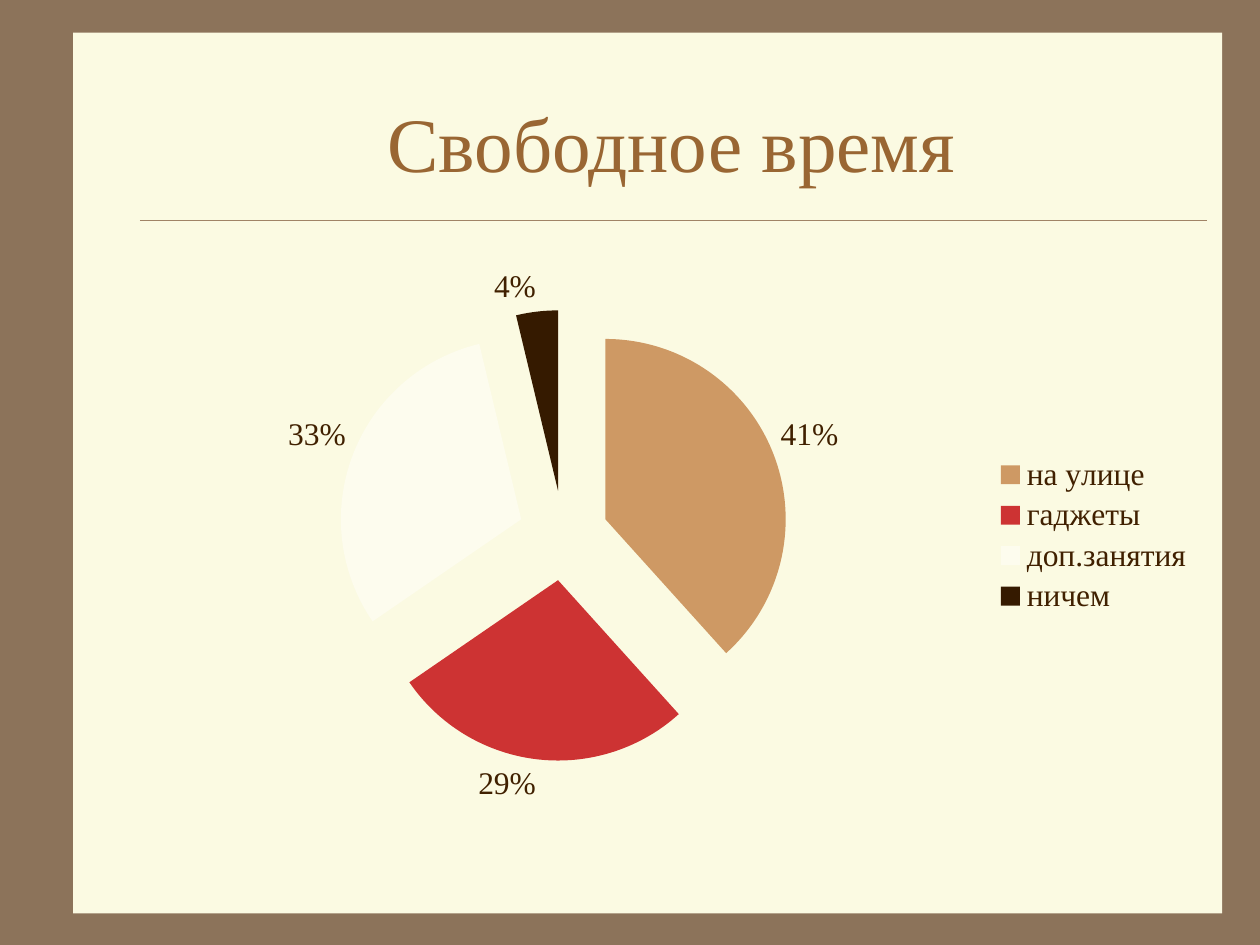
from dataclasses import dataclass

from lxml import etree
from pptx import Presentation
from pptx.chart.data import CategoryChartData
from pptx.dml.color import RGBColor
from pptx.enum.chart import XL_CHART_TYPE, XL_LABEL_POSITION, XL_LEGEND_POSITION
from pptx.enum.shapes import MSO_CONNECTOR, MSO_SHAPE
from pptx.enum.text import MSO_ANCHOR, PP_ALIGN
from pptx.oxml.ns import qn
from pptx.util import Inches, Pt

PIE = XL_CHART_TYPE.PIE
OUTSIDE_END = XL_LABEL_POSITION.OUTSIDE_END
LEGEND_RIGHT = XL_LEGEND_POSITION.RIGHT
STRAIGHT = MSO_CONNECTOR.STRAIGHT
RECTANGLE = MSO_SHAPE.RECTANGLE
MIDDLE = MSO_ANCHOR.MIDDLE
CENTER = PP_ALIGN.CENTER


@dataclass(frozen=True)
class Theme:
    font: str = "Times New Roman"
    title_size: int = 44
    chart_size: int = 18
    background: RGBColor = RGBColor.from_string("8C735A")
    paper: RGBColor = RGBColor.from_string("FBFAE2")
    rule: RGBColor = RGBColor.from_string("A08366")
    title: RGBColor = RGBColor.from_string("996633")
    text: RGBColor = RGBColor.from_string("402000")


THEME = Theme()
SLICES = [
    ("на улице", 0.41, "CE9964"),
    ("гаджеты", 0.29, "CD3333"),
    ("доп.занятия", 0.33, "FDFCEE"),
    ("ничем", 0.04, "351A00"),
]
EXPLOSION = 25
LEFT, WIDTH = Inches(1.08), Inches(8.5)

presentation = Presentation()
presentation.slide_width = Inches(10)
presentation.slide_height = Inches(7.5)
slide = presentation.slides.add_slide(presentation.slide_layouts[6])
slide.background.fill.solid()
slide.background.fill.fore_color.rgb = THEME.background

# Paper and rule
paper = slide.shapes.add_shape(
    RECTANGLE, Inches(0.58), Inches(0.26), Inches(9.12), Inches(6.99))
paper.shadow.inherit = False
paper.fill.solid()
paper.fill.fore_color.rgb = THEME.paper
paper.line.fill.background()

rule = slide.shapes.add_connector(
    STRAIGHT, Inches(1.11), Inches(1.75), Inches(9.58), Inches(1.75))
rule.line.color.rgb = THEME.rule
rule.line.width = Pt(0.25)
etree.SubElement(rule._element.spPr, qn("a:effectLst"))

# Title
title = slide.shapes.add_textbox(LEFT, Inches(0.5), WIDTH, Inches(1.25))
text_frame = title.text_frame
text_frame.word_wrap = True
text_frame.vertical_anchor = MIDDLE
text_frame.text = "Свободное время"
paragraph = text_frame.paragraphs[0]
paragraph.alignment = CENTER
font = paragraph.runs[0].font
font.name = THEME.font
font.size = Pt(THEME.title_size)
font.color.rgb = THEME.title

# Pie chart
chart_data = CategoryChartData(number_format="0%")
chart_data.categories = [name for name, _, _ in SLICES]
chart_data.add_series("Series 1", [value for _, value, _ in SLICES])
chart = slide.shapes.add_chart(
    PIE, LEFT, Inches(2), WIDTH, Inches(4.5), chart_data).chart
chart.has_title = False
chart.font.name = THEME.font
chart.font.size = Pt(THEME.chart_size)
chart.font.color.rgb = THEME.text
chart.has_legend = True
chart.legend.position = LEGEND_RIGHT
chart.legend.include_in_layout = False

plot = chart.plots[0]
plot.vary_by_categories = True
plot.has_data_labels = True
labels = plot.data_labels
labels.show_value = True
labels.show_percentage = False
labels.number_format = "0%"
labels.number_format_is_linked = False
labels.position = OUTSIDE_END

series = plot.series[0]
for index, (_, _, color) in enumerate(SLICES):
    fill = series.points[index].format.fill
    fill.solid()
    fill.fore_color.rgb = RGBColor.from_string(color)

explosion = etree.Element(qn("c:explosion"), val=str(EXPLOSION))
series._element.find(qn("c:dPt")).addprevious(explosion)

presentation.save("out.pptx")
